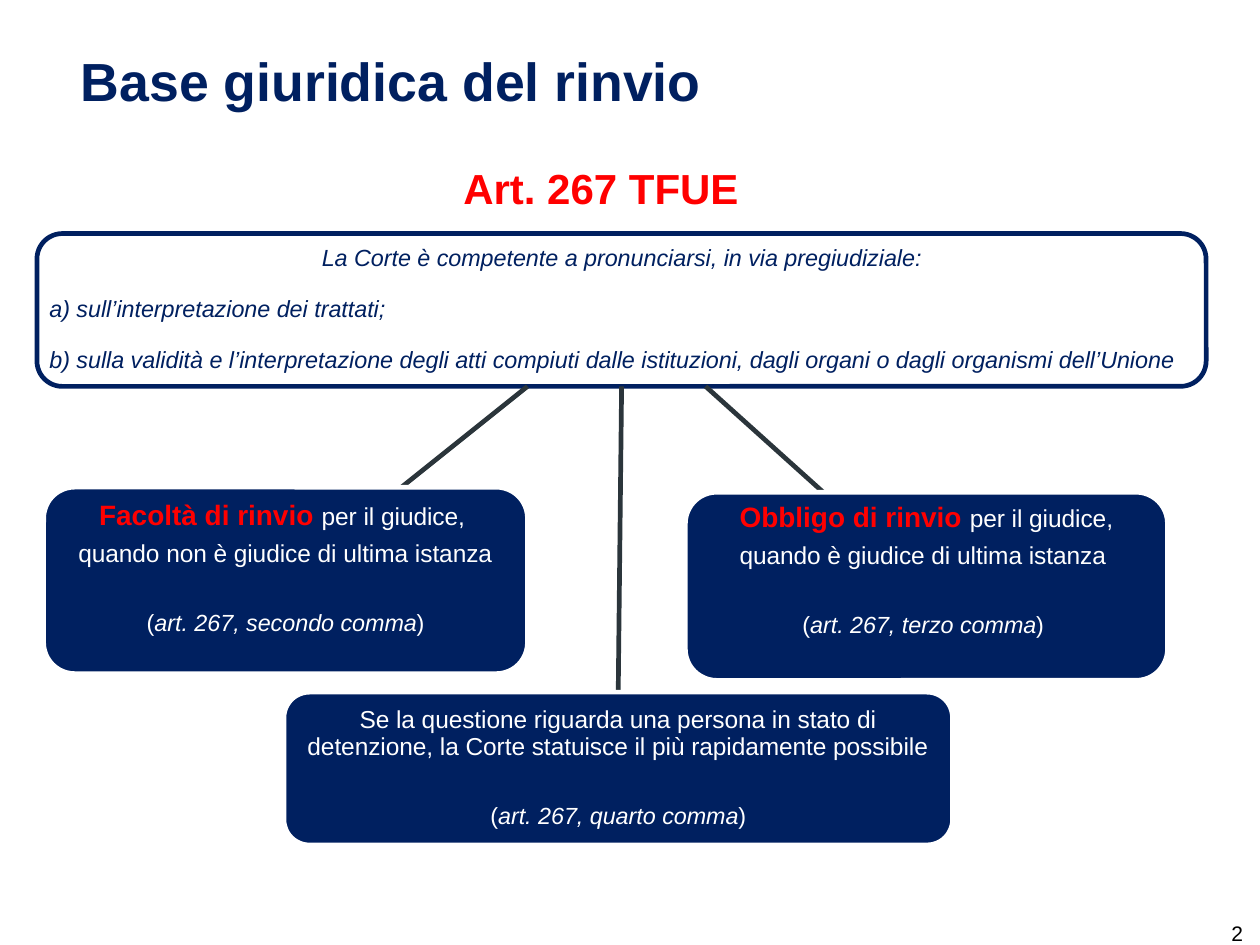
from dataclasses import dataclass

from lxml import etree
from pptx import Presentation
from pptx.dml.color import RGBColor
from pptx.enum.shapes import MSO_CONNECTOR as Connector, MSO_SHAPE as Shape
from pptx.enum.text import MSO_ANCHOR as Anchor, MSO_AUTO_SIZE as AutoSize, PP_ALIGN as Align
from pptx.oxml.ns import qn
from pptx.util import Inches, Pt

COLORS = {"navy": "002060", "red": "FF0000", "white": "FFFFFF",
          "slate": "2B353B", "black": "000000"}
FONT = "Arial"


@dataclass
class Words:
    text: str
    size: float = 10
    color: str = "white"
    bold: bool = False
    italic: bool = False


@dataclass
class Line:
    words: list[Words]
    space_before: float = 0
    align: Align = Align.CENTER


@dataclass
class Panel:
    left: float
    top: float
    width: float
    height: float
    top_inset: float
    fill: str
    outline: str
    lines: list[Line]


@dataclass
class Link:
    x1: float
    y1: float
    x2: float
    y2: float


def rgb(name: str) -> RGBColor:
    return RGBColor.from_string(COLORS[name])


def style_font(font, words: Words) -> None:
    font.name = FONT
    font.size = Pt(words.size)
    font.bold = words.bold
    font.italic = words.italic
    font.color.rgb = rgb(words.color)


def set_insets(frame, left: float, top: float, right: float, bottom: float) -> None:
    frame.margin_left, frame.margin_top = Inches(left), Inches(top)
    frame.margin_right, frame.margin_bottom = Inches(right), Inches(bottom)


def write_line(paragraph, line: Line) -> None:
    paragraph.alignment = line.align
    paragraph.line_spacing = 0.9
    paragraph.space_before = Pt(line.space_before)
    for words in line.words:
        run = paragraph.add_run()
        run.text = words.text
        style_font(run.font, words)


def draw_panel(slide, panel: Panel) -> None:
    box = slide.shapes.add_shape(Shape.ROUNDED_RECTANGLE, Inches(panel.left), Inches(panel.top),
                                 Inches(panel.width), Inches(panel.height))
    box.shadow.inherit = False
    box.fill.solid()
    box.fill.fore_color.rgb = rgb(panel.fill)
    box.line.color.rgb = rgb(panel.outline)
    box.line.width = Pt(2)
    frame = box.text_frame
    frame.word_wrap = True
    frame.vertical_anchor = Anchor.TOP
    set_insets(frame, 0.03, panel.top_inset, 0.03, 0.03)
    for index, line in enumerate(panel.lines):
        write_line(frame.add_paragraph() if index else frame.paragraphs[0], line)


def draw_link(slide, link: Link) -> None:
    connector = slide.shapes.add_connector(Connector.STRAIGHT, Inches(link.x1), Inches(link.y1),
                                           Inches(link.x2), Inches(link.y2))
    connector.line.color.rgb = rgb("slate")
    connector.line.width = Pt(2)
    etree.SubElement(connector._element.spPr, qn("a:effectLst"))


def citation(paragraph_name: str, tail: str = ")") -> Line:
    return Line([Words("("), Words(f"art. 267, {paragraph_name} comma", italic=True),
                 Words(tail)], space_before=18.5)


def outcome(heading: str, opening: str, condition: str, source: Line) -> list[Line]:
    return [Line([Words(heading, 12, "red", bold=True), Words(opening, 10.5)]),
            Line([Words(condition, 10.5)], space_before=4.3), source]


def article(text: str, space_before: float = 11, align: Align = Align.LEFT) -> Line:
    return Line([Words(text, color="navy", italic=True)], space_before, align)


PANELS = [
    Panel(0.22, 1.39, 6.96, 0.91, 0.03, "white", "navy", [
        article("La Corte è competente a pronunciarsi, in via pregiudiziale:", 0, Align.CENTER),
        article("a) sull’interpretazione dei trattati;"),
        article("b) sulla validità e l’interpretazione degli atti compiuti dalle istituzioni, "
                "dagli organi o dagli organismi dell’Unione")]),
    Panel(1.69, 4.12, 3.98, 0.91, 0.05, "navy", "white", [
        Line([Words("Se la questione riguarda una persona in stato di detenzione, "
                    "la Corte statuisce il più rapidamente possibile", 10.5)]),
        citation("quarto")]),
    Panel(4.08, 2.93, 2.87, 1.12, 0.01, "navy", "white", outcome(
        "Obbligo di rinvio ", "per il giudice,", "quando è giudice di ultima istanza ",
        citation("terzo", ") "))),
    Panel(0.26, 2.9, 2.88, 1.11, 0.03, "navy", "white", outcome(
        "Facoltà di rinvio ", "per il giudice, ", "quando non è giudice di ultima istanza",
        citation("secondo"))),
]
LINKS = [Link(3.7, 2.3, 3.68, 4.12), Link(4.2, 2.3, 4.9, 2.93), Link(3.14, 2.3, 2.39, 2.9)]


def main() -> None:
    prs = Presentation()
    prs.slide_width = Inches(7.5)
    prs.slide_height = prs.slide_width * 3 // 4
    slide = prs.slides.add_slide(prs.slide_layouts[5])

    # Title
    title = slide.shapes.title
    title.left, title.top = Inches(0.25), Inches(0.14)
    title.width, title.height = Inches(7.06), Inches(0.57)
    frame = title.text_frame
    frame.text = "Base giuridica del rinvio"
    frame.auto_size = AutoSize.NONE
    frame.vertical_anchor = Anchor.BOTTOM
    set_insets(frame, 0, 0.04, 0.08, 0.04)
    heading = frame.paragraphs[0]
    heading.alignment = Align.LEFT
    heading._p.get_or_add_pPr().set("marL", str(Inches(0.23)))
    style_font(heading.runs[0].font, Words("", 23, "navy", bold=True))

    # Article, its consequences and the lines between them
    article_panel, *outcome_panels = PANELS
    draw_panel(slide, article_panel)
    for link in LINKS:
        draw_link(slide, link)
    for panel in outcome_panels:
        draw_panel(slide, panel)

    # Article heading
    treaty = slide.shapes.add_textbox(Inches(2.66), Inches(0.92), Inches(1.87), Inches(0.4))
    treaty.text_frame.text = "Art. 267 TFUE"
    style_font(treaty.text_frame.paragraphs[0].runs[0].font, Words("", 18, "red", bold=True))

    # Slide number
    number = slide.shapes.add_textbox(Inches(7.25), Inches(5.44), Inches(0.25), Inches(0.19))
    number.text_frame.text = "2"
    set_insets(number.text_frame, 0.08, 0.04, 0.08, 0.04)
    style_font(number.text_frame.paragraphs[0].runs[0].font, Words("", 9, "black"))

    prs.save("out.pptx")


if __name__ == "__main__":
    main()
